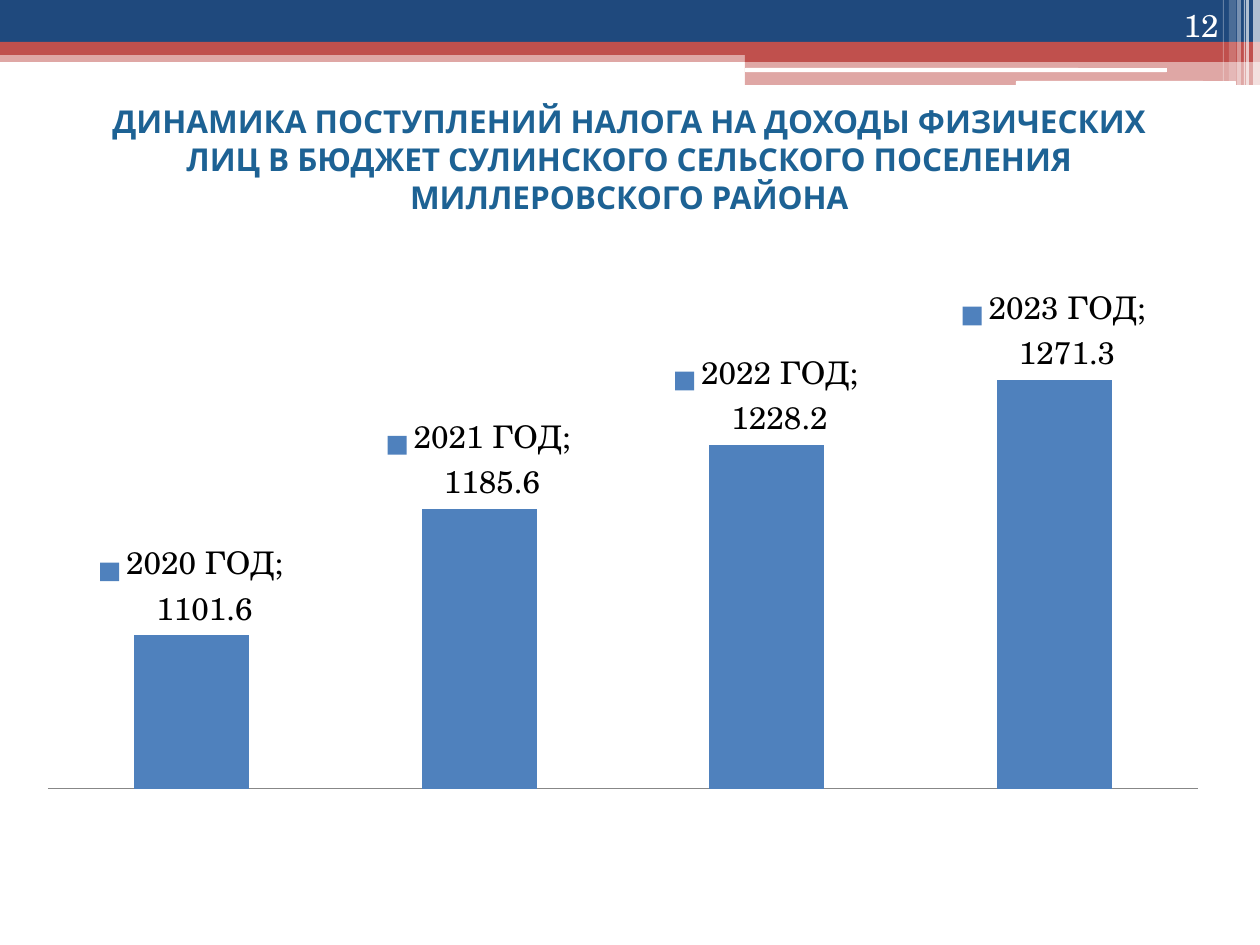
from dataclasses import dataclass
from pptx import Presentation
from pptx.chart.data import CategoryChartData
from pptx.dml.color import RGBColor
from pptx.enum.chart import XL_CHART_TYPE, XL_LABEL_POSITION, XL_TICK_LABEL_POSITION, XL_TICK_MARK
from pptx.enum.shapes import MSO_SHAPE
from pptx.enum.text import MSO_ANCHOR, MSO_AUTO_SIZE, PP_ALIGN
from pptx.oxml import parse_xml
from pptx.oxml.ns import nsdecls, qn
from pptx.util import Pt

RECT, ROUND = MSO_SHAPE.RECTANGLE, MSO_SHAPE.ROUNDED_RECTANGLE
COLUMN = XL_CHART_TYPE.COLUMN_CLUSTERED
OUTSIDE = XL_LABEL_POSITION.OUTSIDE_END
NO_LABELS, NO_TICKS = XL_TICK_LABEL_POSITION.NONE, XL_TICK_MARK.NONE
TOP, BOTTOM = MSO_ANCHOR.TOP, MSO_ANCHOR.BOTTOM
CENTER, RIGHT = PP_ALIGN.CENTER, PP_ALIGN.RIGHT
GROW, FIXED = MSO_AUTO_SIZE.SHAPE_TO_FIT_TEXT, MSO_AUTO_SIZE.NONE
EMU_PER_PX = 914400 / 126


@dataclass(frozen=True)
class Theme:
    navy: str = "1F497D"
    red: str = "C0504D"
    white: str = "FFFFFF"
    title: str = "1D6294"
    bar: str = "4F81BD"
    text: str = "000000"
    axis: str = "878787"
    head_font: str = "Karla"
    body_font: str = "TeX Gyre Schola"
    size: int = 18


def px(*lengths):
    return [round(n * EMU_PER_PX) for n in lengths]


def apply(obj, values):
    for name, value in values.items():
        setattr(obj, name, value)


class Deck:
    """Builds slide elements in one shared style."""

    def __init__(self, theme, width, height):
        self.theme = theme
        self.prs = Presentation()
        self.prs.slide_width, self.prs.slide_height = px(width, height)
        self.s = self.prs.slides.add_slide(self.prs.slide_layouts[6])

    def font(self, font, name, color, bold=False):
        apply(font, {"name": name, "size": Pt(self.theme.size), "bold": bold})
        font.color.rgb = RGBColor.from_string(color)

    def band(self, box, color, alpha=100, kind=RECT):
        sp = self.s.shapes.add_shape(kind, *px(*box))
        sp.shadow.inherit = False
        sp.fill.solid()
        sp.fill.fore_color.rgb = RGBColor.from_string(color)
        sp.line.fill.background()
        if alpha < 100:
            clr = sp.fill._xPr.find(".//" + qn("a:srgbClr"))
            clr.append(parse_xml(f'<a:alpha {nsdecls("a")} val="{alpha * 1000}"/>'))

    def text(self, box, words, name, color, align, anchor=TOP, fit=FIXED, bold=False):
        tf = self.s.shapes.add_textbox(*px(*box)).text_frame
        apply(tf, {"word_wrap": True, "auto_size": fit, "vertical_anchor": anchor})
        p = tf.paragraphs[0]
        p.alignment = align
        r = p.add_run()
        r.text = words
        self.font(r.font, name, color, bold)

    def columns(self, box, series, values, low, high, layout):
        data = CategoryChartData()
        data.categories = list(values)
        data.add_series(series, list(values.values()))
        chart = self.s.shapes.add_chart(COLUMN, *px(*box), data).chart
        apply(chart, {"has_legend": False, "has_title": False})
        self.font(chart.font, self.theme.body_font, self.theme.text)
        apply(chart.value_axis, {"minimum_scale": low, "maximum_scale": high,
                                 "has_major_gridlines": False, "visible": False})
        axis = chart.category_axis
        apply(axis, {"tick_label_position": NO_LABELS, "major_tick_mark": NO_TICKS,
                     "minor_tick_mark": NO_TICKS})
        axis.format.line.color.rgb = RGBColor.from_string(self.theme.axis)
        plot = chart.plots[0]
        apply(plot, {"gap_width": 150, "vary_by_categories": False, "has_data_labels": True})
        fill = plot.series[0].format.fill
        fill.solid()
        fill.fore_color.rgb = RGBColor.from_string(self.theme.bar)
        labels = plot.data_labels
        apply(labels, {"show_value": True, "show_category_name": True,
                       "show_legend_key": True, "position": OUTSIDE})
        self.font(labels.font, self.theme.body_font, self.theme.text)
        labels._element.find(qn("c:showBubbleSize")).addnext(
            parse_xml(f'<c:separator {nsdecls("c")}>; </c:separator>'))
        self.place_plot(chart, layout)

    def place_plot(self, chart, layout):
        area = chart._chartSpace.chart.plotArea
        for old in area.findall(qn("c:layout")):
            area.remove(old)
        modes = '<c:layoutTarget val="inner"/><c:xMode val="edge"/><c:yMode val="edge"/>'
        parts = "".join(f'<c:{k} val="{v}"/>' for k, v in zip("xywh", layout))
        area.insert(0, parse_xml(f'<c:layout {nsdecls("c")}><c:manualLayout>'
                                 f'{modes}{parts}</c:manualLayout></c:layout>'))


def main():
    t = Theme()
    deck = Deck(t, 1260, 945)
    bands = [
        ((0, 50, 1260, 12), t.red, 50),
        ((0, 0, 1260, 43), t.navy),
        ((0, 42, 1260, 13), t.red),
        ((745, 49, 515, 13), t.red),
        ((745, 61, 515, 24), t.red, 50),
        ((745, 68, 422, 4), t.white, 100, ROUND),
        ((1016, 81, 220, 5), t.white, 100, ROUND),
    ]
    stripes = [(1253, 7, 85, 65), (1246, 3, 85, 65), (1244, 1, 85, 60),
               (1237, 4, 85, 40), (1229, 7, 81, 20), (1223, 1, 81, 30)]
    for band in bands:
        deck.band(*band)
    for left, width, height, alpha in stripes:
        deck.band((left, 0, width, height), t.white, alpha)
    deck.text((1126, 0, 105, 50), "12", t.body_font, t.white, RIGHT, BOTTOM)
    deck.text((84, 96, 1091, 127),
              "ДИНАМИКА ПОСТУПЛЕНИЙ НАЛОГА НА ДОХОДЫ ФИЗИЧЕСКИХ ЛИЦ "
              "В БЮДЖЕТ СУЛИНСКОГО СЕЛЬСКОГО ПОСЕЛЕНИЯ МИЛЛЕРОВСКОГО РАЙОНА",
              t.head_font, t.title, CENTER, fit=GROW, bold=True)
    income_tax = {"2020 ГОД": 1101.6, "2021 ГОД": 1185.6,
                  "2022 ГОД": 1228.2, "2023 ГОД": 1271.3}
    deck.columns((24, 284, 1198, 515), "Series 1", income_tax, 1000, 1300,
                 (0.02, 0.09, 0.96, 0.89))
    deck.prs.save("out.pptx")


if __name__ == "__main__":
    main()
